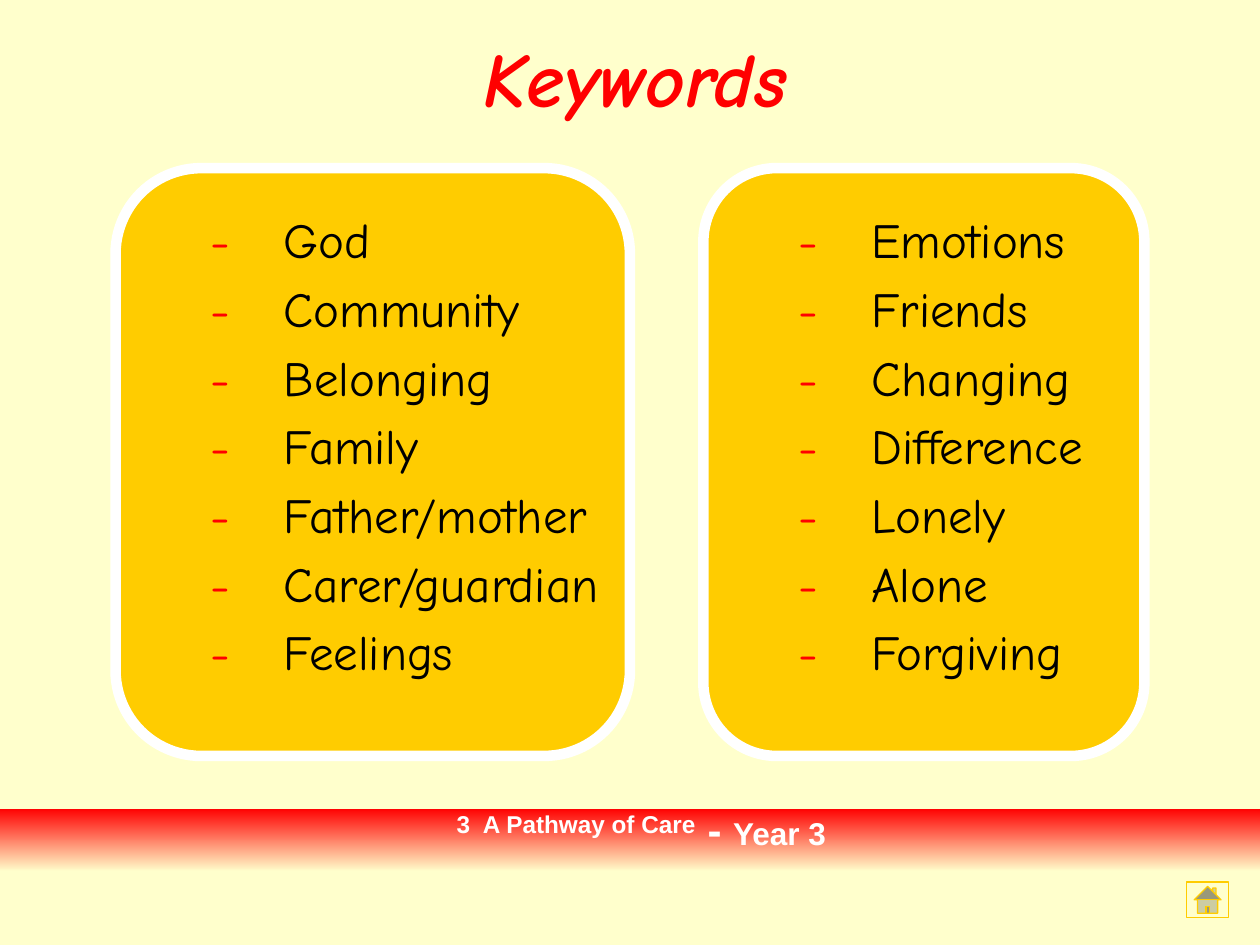
from pptx import Presentation
from pptx.dml.color import RGBColor
from pptx.enum.shapes import MSO_SHAPE as Kind
from pptx.enum.text import MSO_ANCHOR as Anchor, MSO_AUTO_SIZE as Fit, PP_ALIGN as Align
from pptx.util import Cm, Pt

RED, CREAM, GOLD, WHITE, BLACK = "FF0000", "FFFFCC", "FFCC00", "FFFFFF", "000000"
HAND, SANS = "Comic Neue", "Arial"
LEFT = ["God", "Community", "Belonging", "Family", "Father/mother",
        "Carer/guardian", "Feelings"]
RIGHT = ["Emotions", "Friends", "Changing", "Difference", "Lonely", "Alone",
         "Forgiving"]
CARDS = [(2.33, 10.37, 10.16, LEFT), (14.18, 8.89, 8.89, RIGHT)]


def tint(code):
    return RGBColor.from_string(code)


class Page:
    def __init__(self, deck):
        self.slide = deck.slides.add_slide(deck.slide_layouts[5])
        fill = self.slide.background.fill
        fill.solid()
        fill.fore_color.rgb = tint(CREAM)

    def shape(self, kind, box, fill=None, line=None, width=0):
        item = self.slide.shapes.add_shape(kind, *map(Cm, box))
        item.shadow.inherit = False
        if fill:
            item.fill.solid()
            item.fill.fore_color.rgb = tint(fill)
        if line:
            item.line.color.rgb = tint(line)
            item.line.width = Pt(width)
        else:
            item.line.fill.background()
        return item

    def band(self, box, top, base):
        fill = self.shape(Kind.RECTANGLE, box).fill
        fill.gradient()
        fill.gradient_angle = 270
        for stop, code in zip(fill.gradient_stops, (top, base)):
            stop.color.rgb = tint(code)

    def font(self, para, name, size, code, bold=None, slant=None):
        font = para.font
        font.name, font.size = name, Pt(size)
        font.bold, font.italic = bold, slant
        font.color.rgb = tint(code)

    def title(self, text, box):
        item = self.slide.shapes.title
        item.left, item.top, item.width, item.height = map(Cm, box)
        frame = item.text_frame
        frame.text = text
        frame.auto_size = Fit.NONE
        frame.vertical_anchor = Anchor.MIDDLE
        para = frame.paragraphs[0]
        para.alignment = Align.CENTER
        self.font(para, HAND, 44, RED, True, True)

    def text(self, box):
        frame = self.slide.shapes.add_textbox(*map(Cm, box)).text_frame
        frame.word_wrap = True
        return frame

    def label(self, box, parts):
        para = self.text(box).paragraphs[0]
        para.alignment = Align.CENTER
        self.font(para, SANS, 24, WHITE, True)
        for text, size, rise in parts:
            run = para.add_run()
            run.text = text
            run.font.size = Pt(size)
            if rise:
                run.font._element.set("baseline", str(rise * 1000))

    def words(self, box, items):
        frame = self.text(box)
        frame.margin_left = frame.margin_right = 0
        frame.margin_top = frame.margin_bottom = 0
        for spot, word in enumerate(items):
            para = frame.add_paragraph() if spot else frame.paragraphs[0]
            para.space_before = Pt(5.6)
            props = para._p.get_or_add_pPr()
            props.set("marL", "0")
            props.set("indent", str(Cm(1.06)))
            self.font(para, HAND, 28, BLACK)
            for text, code in (("-", RED), ("\t" + word, BLACK)):
                run = para.add_run()
                run.text = text
                run.font.color.rgb = tint(code)


def main():
    deck = Presentation()
    deck.slide_width, deck.slide_height = Cm(25.4), Cm(19.05)
    page = Page(deck)
    page.band((0, 16.3, 25.4, 1.27), RED, CREAM)
    page.label((8.69, 16.08, 8.48, 1.27),
               [("3  A Pathway of Care", 24, 30), (" - ", 24, 0), ("Year 3", 18, 0)])
    page.shape(Kind.ACTION_BUTTON_HOME, (23.92, 17.78, 0.85, 0.72), CREAM, GOLD, 0.75)
    page.title("Keywords", (0.64, 0.64, 24.33, 1.83))
    for left, width, span, items in CARDS:
        page.shape(Kind.ROUNDED_RECTANGLE, (left, 3.39, width, 11.85), GOLD, WHITE, 6)
        page.words((left + 0.85, 4.23, span, 11.22), items)
    deck.save("out.pptx")


if __name__ == "__main__":
    main()
